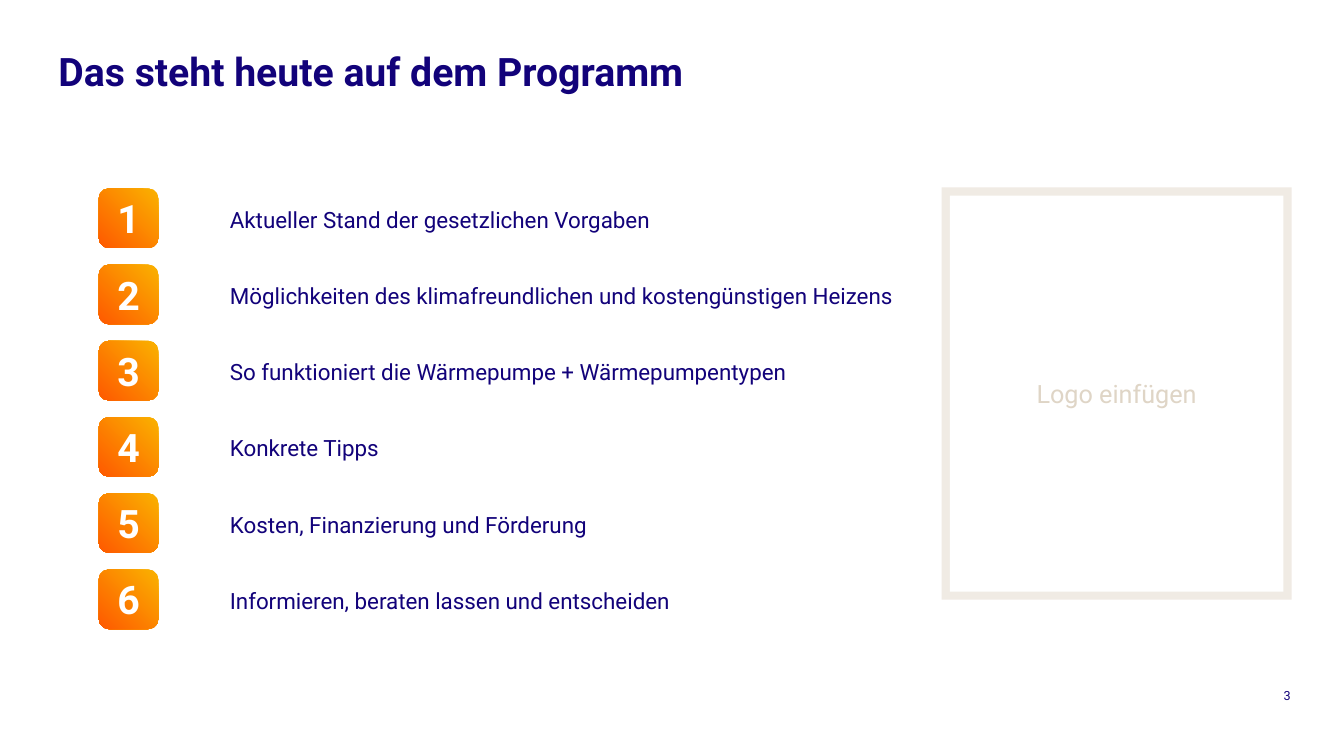
"""Build the agenda slide with six numbered topics and a logo frame."""
from pptx import Presentation
from pptx.dml.color import RGBColor
from pptx.enum.shapes import MSO_SHAPE
from pptx.enum.text import MSO_ANCHOR, PP_ALIGN
from pptx.util import Inches, Pt

TITLE = "Das steht heute auf dem Programm"
TOPICS = [
    "Aktueller Stand der gesetzlichen Vorgaben",
    "Möglichkeiten des klimafreundlichen und kostengünstigen Heizens",
    "So funktioniert die Wärmepumpe + Wärmepumpentypen",
    "Konkrete Tipps",
    "Kosten, Finanzierung und Förderung",
    "Informieren, beraten lassen und entscheiden",
]
LOGO_HINT = "Logo einfügen"
PAGE_NUMBER = "3"

FONT = "Roboto"
NAVY = RGBColor(0x12, 0x02, 0x7A)
WHITE = RGBColor(0xFF, 0xFF, 0xFF)
AMBER = RGBColor(0xFA, 0xB2, 0x00)
ORANGE = RGBColor(0xFE, 0x59, 0x00)
SAND = RGBColor(0xF0, 0xEB, 0xE4)
DARK_SAND = RGBColor(0xDF, 0xD5, 0xC6)

RECTANGLE, ROUNDED = MSO_SHAPE.RECTANGLE, MSO_SHAPE.ROUNDED_RECTANGLE
TOP, MIDDLE = MSO_ANCHOR.TOP, MSO_ANCHOR.MIDDLE
LEFT, CENTER, RIGHT = PP_ALIGN.LEFT, PP_ALIGN.CENTER, PP_ALIGN.RIGHT

BADGE_LEFT, TOPIC_LEFT, TOPIC_WIDTH = 0.98, 2.28, 6.75
FIRST_TOP, ROW_PITCH, BADGE_SIZE = 1.87, 0.756, 0.59
FRAME_LEFT, FRAME_TOP, FRAME_WIDTH, FRAME_HEIGHT = 9.34, 1.86, 3.47, 4.09
FRAME_BORDER = 0.08


def write(shape, text, size, color, align=LEFT, anchor=MIDDLE, bold=False):
    frame = shape.text_frame
    frame.word_wrap = True
    frame.vertical_anchor = anchor
    paragraph = frame.paragraphs[0]
    paragraph.text = text
    paragraph.alignment = align
    font = paragraph.font
    font.name, font.size, font.bold = FONT, Pt(size), bold
    font.color.rgb = color
    return paragraph


def add_label(slide, box, text, size, top_inset=0, **style):
    label = slide.shapes.add_textbox(*map(Inches, box))
    frame = label.text_frame
    frame.margin_left = frame.margin_right = frame.margin_bottom = 0
    frame.margin_top = Inches(top_inset)
    return write(label, text, size, NAVY, **style)


def add_panel(slide, kind, box, color=None):
    panel = slide.shapes.add_shape(kind, *map(Inches, box))
    panel.shadow.inherit = False
    panel.line.fill.background()
    if color is not None:
        panel.fill.solid()
        panel.fill.fore_color.rgb = color
    return panel


def add_badge(slide, top, number):
    badge = add_panel(slide, ROUNDED, (BADGE_LEFT, top, BADGE_SIZE, BADGE_SIZE))
    badge.fill.gradient()
    badge.fill.gradient_angle = 225
    for stop, color in zip(badge.fill.gradient_stops, (AMBER, ORANGE)):
        stop.color.rgb = color
    write(badge, str(number), 28, WHITE, align=CENTER, bold=True)


def main():
    deck = Presentation()
    deck.slide_width, deck.slide_height = Inches(13.33), Inches(7.5)
    slide = deck.slides.add_slide(deck.slide_layouts[6])

    title = add_label(slide, (0.58, 0.52, 8.03, 0.87), TITLE, 28, anchor=TOP, bold=True)
    title.line_spacing = 0.9
    add_label(slide, (12.49, 6.82, 0.31, 0.16), PAGE_NUMBER, 9, align=RIGHT)

    for row, topic in enumerate(TOPICS):
        top = FIRST_TOP + row * ROW_PITCH
        add_badge(slide, top, row + 1)
        topic_box = (TOPIC_LEFT, top, TOPIC_WIDTH, BADGE_SIZE)
        add_label(slide, topic_box, topic, 16, top_inset=0.02).space_before = Pt(20)

    add_panel(slide, RECTANGLE, (FRAME_LEFT, FRAME_TOP, FRAME_WIDTH, FRAME_HEIGHT), SAND)
    logo_box = (FRAME_LEFT + FRAME_BORDER, FRAME_TOP + FRAME_BORDER,
                FRAME_WIDTH - 2 * FRAME_BORDER, FRAME_HEIGHT - 2 * FRAME_BORDER)
    logo_area = add_panel(slide, RECTANGLE, logo_box, WHITE)
    write(logo_area, LOGO_HINT, 18, DARK_SAND, align=CENTER)

    deck.save("out.pptx")


if __name__ == "__main__":
    main()
